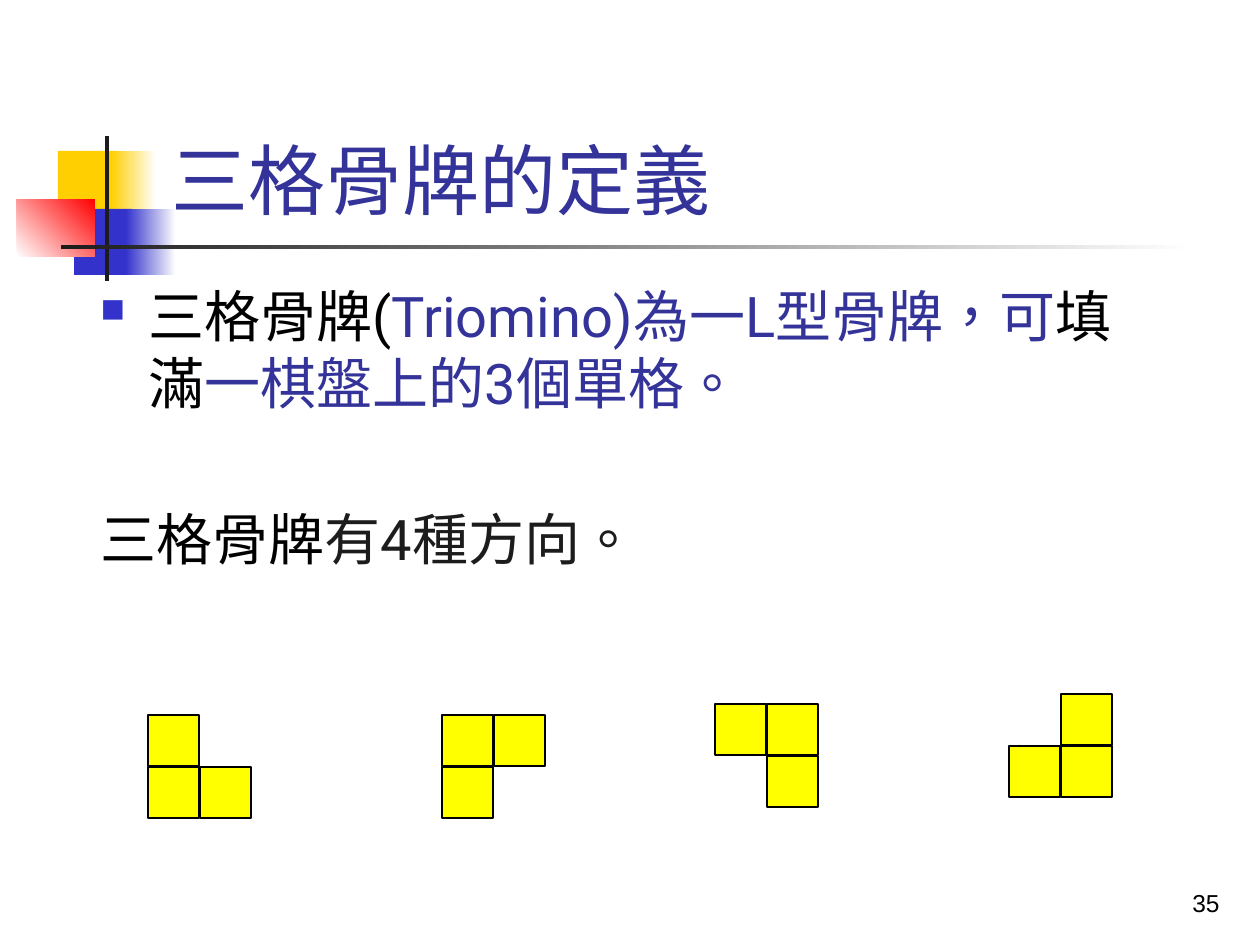
from dataclasses import dataclass
from typing import NamedTuple, Optional

from lxml import etree
from pptx import Presentation
from pptx import util as u
from pptx.dml.color import RGBColor
from pptx.enum import lang, shapes, text
from pptx.oxml import ns

PX = 914400 / 126


@dataclass(frozen=True)
class Theme:
    gold: str = "FFCF01"
    blue: str = "3333CC"
    red: str = "FF0000"
    dark: str = "1C1C1C"
    white: str = "FFFFFF"
    black: str = "000000"
    indigo: str = "333399"
    yellow: str = "FFFF00"
    text_font: str = "Roboto"
    number_font: str = "Arial"
    title_size: int = 44
    body_size: int = 32
    number_size: int = 14


class Box(NamedTuple):
    left: int
    top: int
    width: int
    height: int


class Block(NamedTuple):
    box: Box
    color: str
    fade_to: Optional[str] = None
    angle: int = 0


class Phrase(NamedTuple):
    words: str
    color: str


class Triomino(NamedTuple):
    left: int
    top: int
    cells: tuple


THEME = Theme()
CELL, PITCH = 51, 52
HANGING = 48

ORNAMENT = [
    Block(Box(58, 151, 60, 66), THEME.gold),
    Block(Box(111, 151, 45, 66), THEME.gold, THEME.white),
    Block(Box(74, 209, 58, 66), THEME.blue),
    Block(Box(126, 209, 50, 66), THEME.blue, THEME.white),
    Block(Box(17, 199, 78, 58), THEME.white, THEME.red, 45),
    Block(Box(105, 136, 4, 145), THEME.dark),
    Block(Box(61, 245, 1134, 4), THEME.dark, THEME.white),
]

DEFINITION = [
    Phrase("三格骨牌(", THEME.black),
    Phrase("Triomino)為一L型骨牌，可", THEME.indigo),
    Phrase("填滿", THEME.black),
    Phrase("一棋盤上的3個單格。", THEME.indigo),
]
DIRECTIONS = [Phrase("三格骨牌", THEME.black), Phrase("有4種方向。", THEME.dark)]

TRIOMINOES = [
    Triomino(148, 715, ((0, 1), (1, 1), (0, 0))),
    Triomino(442, 715, ((0, 1), (0, 0), (1, 0))),
    Triomino(715, 704, ((0, 0), (1, 0), (1, 1))),
    Triomino(1009, 694, ((0, 1), (1, 1), (1, 0))),
]


def px(length: int) -> int:
    return round(length * PX)


def emu(box: Box) -> list[int]:
    return [px(length) for length in box]


def rgb(color: str) -> RGBColor:
    return RGBColor.from_string(color)


def draw_block(parent, block: Block, outline: Optional[str] = None) -> None:
    rect = parent.add_shape(shapes.MSO_SHAPE.RECTANGLE, *emu(block.box))
    rect.shadow.inherit = False
    if block.fade_to:
        rect.fill.gradient()
        rect.fill.gradient_angle = block.angle
        for stop, color in zip(rect.fill.gradient_stops, (block.color, block.fade_to)):
            stop.color.rgb = rgb(color)
    else:
        rect.fill.solid()
        rect.fill.fore_color.rgb = rgb(block.color)
    if outline:
        rect.line.color.rgb = rgb(outline)
        rect.line.width = u.Pt(1)
    else:
        rect.line.fill.background()


def draw_triomino(parent, triomino: Triomino) -> None:
    group = parent.add_group_shape()
    for column, row in triomino.cells:
        box = Box(triomino.left + column * PITCH, triomino.top + row * PITCH, CELL, CELL)
        draw_block(group.shapes, Block(box, THEME.yellow), THEME.black)


def add_frame(parent, box: Box, anchor: text.MSO_ANCHOR):
    frame = parent.add_textbox(*emu(box)).text_frame
    frame.word_wrap = True
    frame.vertical_anchor = anchor
    return frame


def write(paragraph, phrases: list[Phrase], size: int, font: str) -> None:
    for phrase in phrases:
        run = paragraph.add_run()
        run.text = phrase.words
        run.font.size = u.Pt(size)
        run.font.name = font
        run.font.color.rgb = rgb(phrase.color)
        run.font.language_id = lang.MSO_LANGUAGE_ID.TRADITIONAL_CHINESE


def add_square_bullet(paragraph) -> None:
    props = paragraph._p.get_or_add_pPr()
    props.set("marL", str(px(HANGING)))
    props.set("indent", str(-px(HANGING)))
    color = etree.SubElement(props, ns.qn("a:buClr"))
    etree.SubElement(color, ns.qn("a:srgbClr"), val=THEME.blue)
    etree.SubElement(props, ns.qn("a:buSzPct"), val="60000")
    etree.SubElement(props, ns.qn("a:buChar"), char="■")


def main() -> None:
    deck = Presentation()
    deck.slide_width, deck.slide_height = px(1260), px(945)
    canvas = deck.slides.add_slide(deck.slide_layouts[6]).shapes

    for block in ORNAMENT:
        draw_block(canvas, block)

    title = add_frame(canvas, Box(159, 29, 1074, 202), text.MSO_ANCHOR.BOTTOM)
    write(title.paragraphs[0], [Phrase("三格骨牌的定義", THEME.indigo)],
          THEME.title_size, THEME.text_font)

    body = add_frame(canvas, Box(88, 275, 1071, 168), text.MSO_ANCHOR.TOP)
    definition = body.paragraphs[0]
    add_square_bullet(definition)
    write(definition, DEFINITION, THEME.body_size, THEME.text_font)
    directions = body.add_paragraph()
    directions.space_before = u.Pt(51)
    write(directions, DIRECTIONS, THEME.body_size, THEME.text_font)

    for triomino in TRIOMINOES:
        draw_triomino(canvas, triomino)

    number = add_frame(canvas, Box(970, 861, 262, 63), text.MSO_ANCHOR.BOTTOM)
    number.paragraphs[0].alignment = text.PP_ALIGN.RIGHT
    write(number.paragraphs[0], [Phrase("35", THEME.black)],
          THEME.number_size, THEME.number_font)

    deck.save("out.pptx")


if __name__ == "__main__":
    main()
